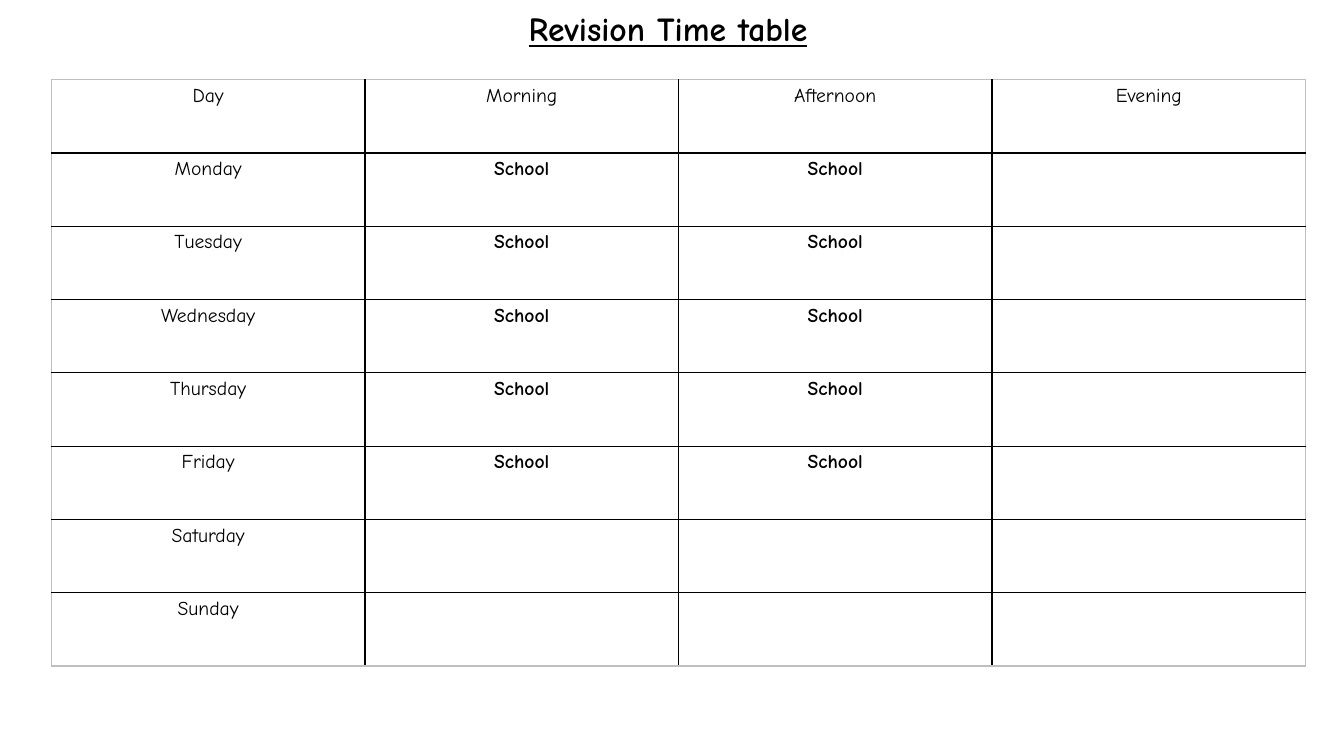
from lxml import etree
from pptx import Presentation
from pptx.dml.color import RGBColor
from pptx.enum.text import MSO_ANCHOR, PP_ALIGN
from pptx.oxml.ns import qn
from pptx.util import Inches, Pt

CENTER = PP_ALIGN.CENTER
TOP = MSO_ANCHOR.TOP
FONT = "Comic Neue"
COLORS = {"ink": "000000", "paper": "FFFFFF", "frame": "BFBFBF"}

HEADINGS = ["Day", "Morning", "Afternoon", "Evening"]
SCHOOL_DAYS = ["Monday", "Tuesday", "Wednesday", "Thursday", "Friday"]
WEEKEND = ["Saturday", "Sunday"]
ROWS = [HEADINGS]
ROWS += [[day, "School", "School", ""] for day in SCHOOL_DAYS]
ROWS += [[day, "", "", ""] for day in WEEKEND]
COLUMN_WIDTH = Inches(3.11)
ROW_HEIGHT = Inches(5.82 / len(ROWS))


def add_centered_text(para, text, size, bold=False, underline=False):
    para.alignment = CENTER
    span = para.add_run()
    span.text = text
    span.font.name = FONT
    span.font.size = Pt(size)
    span.font.bold = bold
    span.font.underline = underline
    span.font.color.rgb = RGBColor.from_string(COLORS["ink"])


def set_borders(cell, sides):
    properties = cell._tc.get_or_add_tcPr()
    for position, (side, color) in enumerate(sides.items()):
        line = etree.Element(qn("a:" + side), w=str(Pt(1)))
        fill = etree.SubElement(line, qn("a:solidFill"))
        etree.SubElement(fill, qn("a:srgbClr"), val=color)
        properties.insert(position, line)


deck = Presentation()
deck.slide_width, deck.slide_height = Inches(13.33), Inches(7.5)
page = deck.slides.add_slide(deck.slide_layouts[5])

# Title
title = page.shapes.title
title.left, title.top = Inches(2.02), Inches(0.03)
title.width, title.height = Inches(9.21), Inches(0.5)
title.text_frame.vertical_anchor = TOP
add_centered_text(title.text_frame.paragraphs[0], "Revision Time table", 24,
                  bold=True, underline=True)

# Timetable grid
timetable = page.shapes.add_table(
    len(ROWS), len(HEADINGS), Inches(0.51), Inches(0.79),
    COLUMN_WIDTH * len(HEADINGS), ROW_HEIGHT * len(ROWS)).table
timetable.first_row = False
timetable.horz_banding = False
for column in timetable.columns:
    column.width = COLUMN_WIDTH
for row in timetable.rows:
    row.height = ROW_HEIGHT

# Cells: black inner rules, grey outer frame
for r, entries in enumerate(ROWS):
    for c, entry in enumerate(entries):
        cell = timetable.cell(r, c)
        outer = {"lnL": c == 0, "lnR": c == len(HEADINGS) - 1,
                 "lnT": r == 0, "lnB": r == len(ROWS) - 1}
        set_borders(cell, {side: COLORS["frame" if edge else "ink"]
                           for side, edge in outer.items()})
        cell.fill.solid()
        cell.fill.fore_color.rgb = RGBColor.from_string(COLORS["paper"])
        if entry:
            add_centered_text(cell.text_frame.paragraphs[0], entry, 14,
                              bold=entry == "School")

deck.save("out.pptx")
